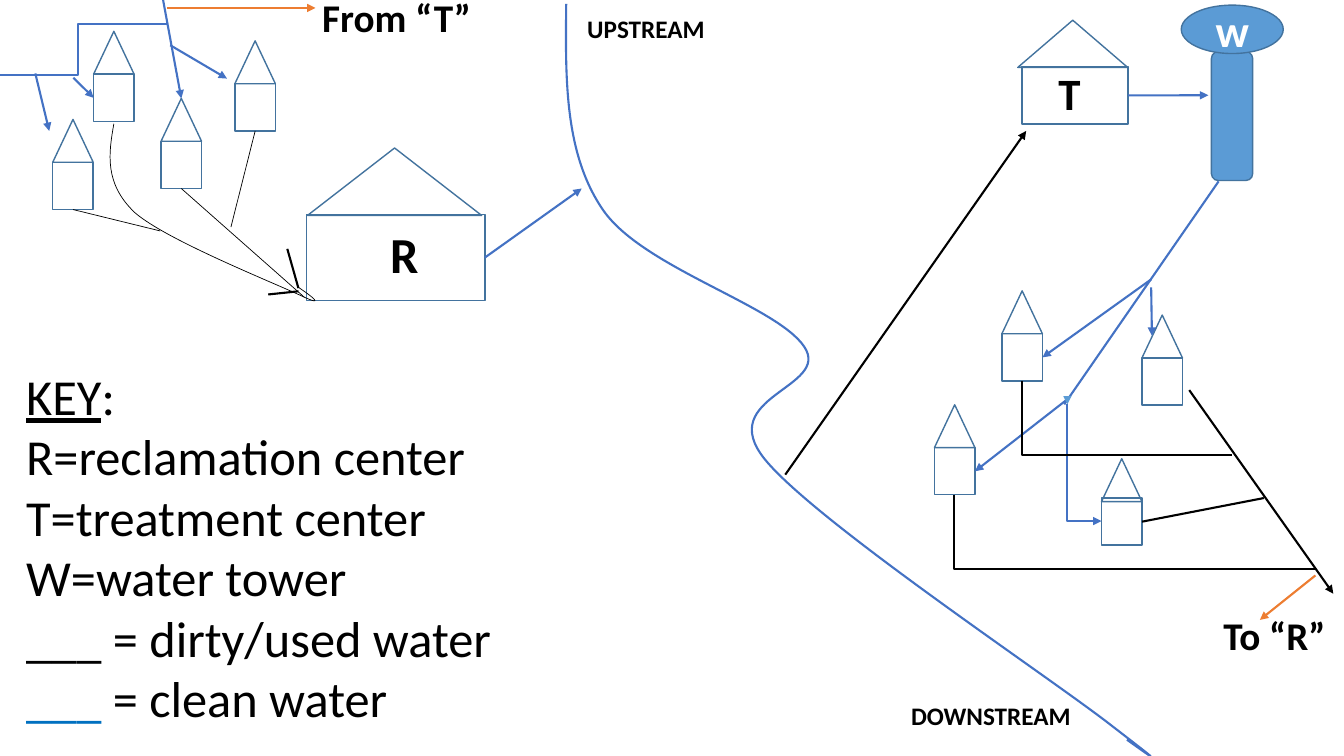
from dataclasses import dataclass
from typing import NamedTuple

from pptx import Presentation, util as u
from pptx.dml.color import RGBColor
from pptx.enum import shapes as kinds, text as t
from pptx.oxml import parse_xml
from pptx.oxml.ns import nsdecls, qn

Form = kinds.MSO_SHAPE
Link = kinds.MSO_CONNECTOR


@dataclass(frozen=True)
class Theme:
    font: str = "Calibri"
    clean: str = "4472C4"
    used: str = "000000"
    sign: str = "ED7D31"
    water: str = "5B9BD5"
    edge: str = "43739E"
    key: str = "0070C0"
    white: str = "FFFFFF"
    huge: int = 36
    large: int = 32
    medium: int = 28
    small: int = 18
    thin: float = 0.5
    rim: float = 1
    thick: float = 1.5


class Box(NamedTuple):
    x: float
    y: float
    w: float
    h: float


class House(NamedTuple):
    wall: Box
    roof: Box


class Spot(NamedTuple):
    x: float
    y: float


class Joint(NamedTuple):
    shape: str
    side: int


@dataclass(frozen=True)
class Pipe:
    start: Spot | Joint
    end: Spot | Joint
    color: str
    width: float = 1.5
    arrow: bool = True


class Run(NamedTuple):
    text: str
    color: str = "000000"
    under: bool = False


class Label(NamedTuple):
    box: Box
    text: str
    size: int


look = Theme()
TOP, LEFT, BOTTOM, RIGHT = range(4)


def cabin(x: float, y: float, sink: float = 0) -> House:
    """Small house with its wall at x, y; sink lowers the roof into the wall."""
    return House(Box(x, y, 1.02, 1.19), Box(x, y - 1.08 + sink, 1.02, 1.08))


HOUSES = {
    "nw": cabin(2.36, 1.87), "sw": cabin(1.33, 4.09),
    "ne": cabin(5.92, 2.11), "mid": cabin(4.06, 3.56),
    "east": cabin(28.78, 9.02), "south": cabin(27.76, 12.55, 0.09),
    "north": cabin(25.25, 8.41), "west": cabin(23.55, 11.28),
    "R": House(Box(7.72, 5.41, 4.5, 2.16), Box(7.75, 3.73, 4.39, 1.7)),
    "T": House(Box(25.76, 1.68, 2.67, 1.45), Box(25.65, 0.51, 2.77, 1.19)),
}

PIPES = [
    Pipe(Joint("sw", BOTTOM), Spot(4.04, 5.82), look.used, look.thin, False),
    Pipe(Joint("mid", BOTTOM), Spot(7.67, 7.49), look.used, look.thin, False),
    Pipe(Joint("ne", BOTTOM), Spot(5.82, 5.72), look.used, look.thin, False),
    Pipe(Spot(6.76, 7.42), Spot(7.52, 7.34), look.used, arrow=False),
    Pipe(Spot(7.52, 7.26), Spot(7.24, 6.27), look.used, arrow=False),
    Pipe(Joint("R", RIGHT), Spot(14.66, 4.75), look.clean),
    Pipe(Spot(19.79, 11.96), Spot(25.86, 3.3), look.used),
    Pipe(Joint("T", RIGHT), Spot(30.45, 2.4), look.clean),
    Pipe(Spot(30.58, 3.38), Spot(31.29, 4.24), look.water, look.thin),
    Pipe(Spot(30.71, 4.57), Spot(26.82, 10.19), look.clean, arrow=False),
    Pipe(Spot(26.9, 10.06), Joint("west", RIGHT), look.clean),
    Pipe(Spot(26.9, 10.06), Spot(26.9, 10.19), look.water, look.thin),
    Pipe(Spot(29.01, 7.04), Joint("north", RIGHT), look.clean),
    Pipe(Spot(29.01, 7.24), Spot(29.03, 8.46), look.clean),
    Pipe(Spot(4.11, 0), Joint("mid roof", TOP), look.clean),
    Pipe(Spot(4.29, 1.14), Spot(5.72, 1.98), look.clean),
    Pipe(Spot(0.89, 1.85), Spot(1.24, 3.3), look.clean),
    Pipe(Spot(1.85, 1.96), Joint("nw", LEFT), look.clean),
    Pipe(Spot(29.97, 9.83), Spot(33.6, 14.96), look.used),
    Pipe(Joint("south", RIGHT), Spot(31.85, 12.55), look.used, arrow=False),
    Pipe(Spot(4.22, 0.2), Spot(7.95, 0.2), look.sign),
    Pipe(Spot(33.15, 14.5), Spot(31.75, 15.62), look.sign),
]
SUPPLY = Pipe(Spot(4.22, 0.61), Spot(-0.28, 1.9), look.clean)
CORNERS = [
    Pipe(Spot(26.9, 10.19), Spot(27.76, 13.13), look.clean),
    Pipe(Spot(24.05, 12.47), Spot(33.15, 14.35), look.used, arrow=False),
    Pipe(Spot(25.76, 9.6), Spot(31.04, 11.46), look.used, arrow=False),
]

# Each curve is a start point followed by triples of Bézier points.
DRAIN = [(2.87, 3.12), (2.74, 3.86), (2.62, 4.62), (3.4, 5.36),
         (4.22, 6.07), (6.99, 7.16), (7.67, 7.49),
         (8.36, 7.8), (7.52, 7.24), (7.52, 7.24)]
RIVER = [(14.27, 0.1), (14.25, 1.98), (14.22, 3.89), (15.21, 5.31),
         (16.23, 6.76), (19.58, 7.7), (20.27, 8.74),
         (20.96, 9.78), (17.98, 9.98), (19.28, 11.58),
         (20.57, 13.16), (26.49, 17.09), (28.02, 18.29),
         (29.54, 19.46), (28.98, 19.05), (28.4, 18.64)]

LABELS = [
    Label(Box(9.58, 5.49, 1.09, 1.8), "R", look.huge),
    Label(Box(26.42, 1.52, 1.52, 1.63), "T", look.large),
    Label(Box(14.55, 0.2, 6.07, 1.02), "UPSTREAM", look.small),
    Label(Box(22.71, 17.53, 6.07, 1.02), "DOWNSTREAM", look.small),
    Label(Box(7.87, -0.3, 5.46, 1.45), "From “T”", look.medium),
    Label(Box(30.58, 15.27, 5.46, 1.45), "To “R”", look.medium),
]
KEY = [
    [Run("KEY", under=True), Run(":")],
    [Run("R=reclamation center")],
    [Run("T=treatment center")],
    [Run("W=water tower")],
    [Run("___ = dirty/used water")],
    [Run("___ ", look.key), Run("= clean water")],
]


def cm(*sizes: float) -> list[u.Length]:
    return [u.Cm(size) for size in sizes]


def draw(slide, form, box: Box, fill: str | None = None):
    shape = slide.shapes.add_shape(form, *cm(*box))
    style(shape, look.edge, look.rim, fill)
    return shape


def style(shape, color: str, width: float, fill: str | None = None) -> None:
    shape.shadow.inherit = False
    if fill:
        shape.fill.solid()
        shape.fill.fore_color.rgb = RGBColor.from_string(fill)
    else:
        shape.fill.background()
    shape.line.color.rgb = RGBColor.from_string(color)
    shape.line.width = u.Pt(width)


def lay(slide, pipe: Pipe, made: dict, kind=Link.STRAIGHT):
    """Draw a pipe and join its ends to the shapes they name."""
    first = pipe.end if isinstance(pipe.start, Joint) else pipe.start
    last = pipe.start if isinstance(pipe.end, Joint) else pipe.end
    line = slide.shapes.add_connector(kind, *cm(*first, *last))
    if isinstance(pipe.start, Joint):
        line.begin_connect(made[pipe.start.shape], pipe.start.side)
    if isinstance(pipe.end, Joint):
        line.end_connect(made[pipe.end.shape], pipe.end.side)
    line.line.color.rgb = RGBColor.from_string(pipe.color)
    line.line.width = u.Pt(pipe.width)
    if pipe.arrow:
        head = parse_xml(f'<a:tailEnd {nsdecls("a")} type="triangle"/>')
        line.line._get_or_add_ln().append(head)
    line._element.spPr.append(parse_xml(f'<a:effectLst {nsdecls("a")}/>'))
    return line


def turn(slide, pipe: Pipe) -> None:
    """Draw a pipe that runs down and then right, as a rotated one-bend elbow."""
    line = lay(slide, pipe, {}, Link.ELBOW)
    wide, high = line.width, line.height
    line.left, line.top = line.left + (wide - high) // 2, line.top + (high - wide) // 2
    line.width, line.height = high, wide
    props = line._element.spPr
    props.find(qn("a:prstGeom")).set("prst", "bentConnector2")
    frame = props.find(qn("a:xfrm"))
    frame.set("rot", str(270 * 60000))
    frame.set("flipH", "1")


def curve(slide, spots: list, color: str, width: float) -> None:
    """Build an outline and merge each three of its segments into a Bézier."""
    points = [cm(*spot) for spot in spots]
    pen = slide.shapes.build_freeform(*points[0])
    pen.add_line_segments(points[1:], close=False)
    shape = pen.convert_to_shape()
    style(shape, color, width)
    steps = list(shape._element.iter(qn("a:lnTo")))
    for bend, *rest in zip(steps[::3], steps[1::3], steps[2::3]):
        bend.tag = qn("a:cubicBezTo")
        for step in rest:
            bend.append(step[0])
            step.getparent().remove(step)


def ink(run, size: int, color: str, bold: bool = True) -> None:
    run.font.name, run.font.size, run.font.bold = look.font, u.Pt(size), bold
    run.font.color.rgb = RGBColor.from_string(color)


def note(slide, box: Box):
    frame = slide.shapes.add_textbox(*cm(*box)).text_frame
    frame.word_wrap = True
    return frame


def tower(slide) -> None:
    draw(slide, Form.ROUNDED_RECTANGLE, Box(30.53, 1.3, 1.04, 3.25), look.water)
    tank = draw(slide, Form.OVAL, Box(29.77, 0.13, 2.57, 1.22), look.water)
    frame = tank.text_frame
    frame.text = "w"
    frame.vertical_anchor = t.MSO_ANCHOR.MIDDLE
    frame.paragraphs[0].alignment = t.PP_ALIGN.CENTER
    ink(frame.paragraphs[0].runs[0], look.large, look.white)


def legend(slide) -> None:
    frame = note(slide, Box(0.41, 9.07, 12.32, 11.02))
    for row, runs in enumerate(KEY):
        para = frame.add_paragraph() if row else frame.paragraphs[0]
        for part in runs:
            run = para.add_run()
            run.text = part.text
            ink(run, look.huge, part.color, False)
            run.font.underline = part.under


def main() -> None:
    deck = Presentation()
    deck.slide_width, deck.slide_height = cm(33.87, 19.05)
    slide = deck.slides.add_slide(deck.slide_layouts[6])
    made = {}
    for name, house in HOUSES.items():
        made[name] = draw(slide, Form.RECTANGLE, house.wall)
        made[f"{name} roof"] = draw(slide, Form.ISOSCELES_TRIANGLE, house.roof)
    curve(slide, DRAIN, look.used, look.thin)
    curve(slide, RIVER, look.clean, look.thick)
    tower(slide)
    for pipe in PIPES:
        lay(slide, pipe, made)
    lay(slide, SUPPLY, made, Link.ELBOW)
    for pipe in CORNERS:
        turn(slide, pipe)
    for label in LABELS:
        frame = note(slide, label.box)
        frame.text = label.text
        ink(frame.paragraphs[0].runs[0], label.size, look.used)
    legend(slide)
    deck.save("out.pptx")


if __name__ == "__main__":
    main()
